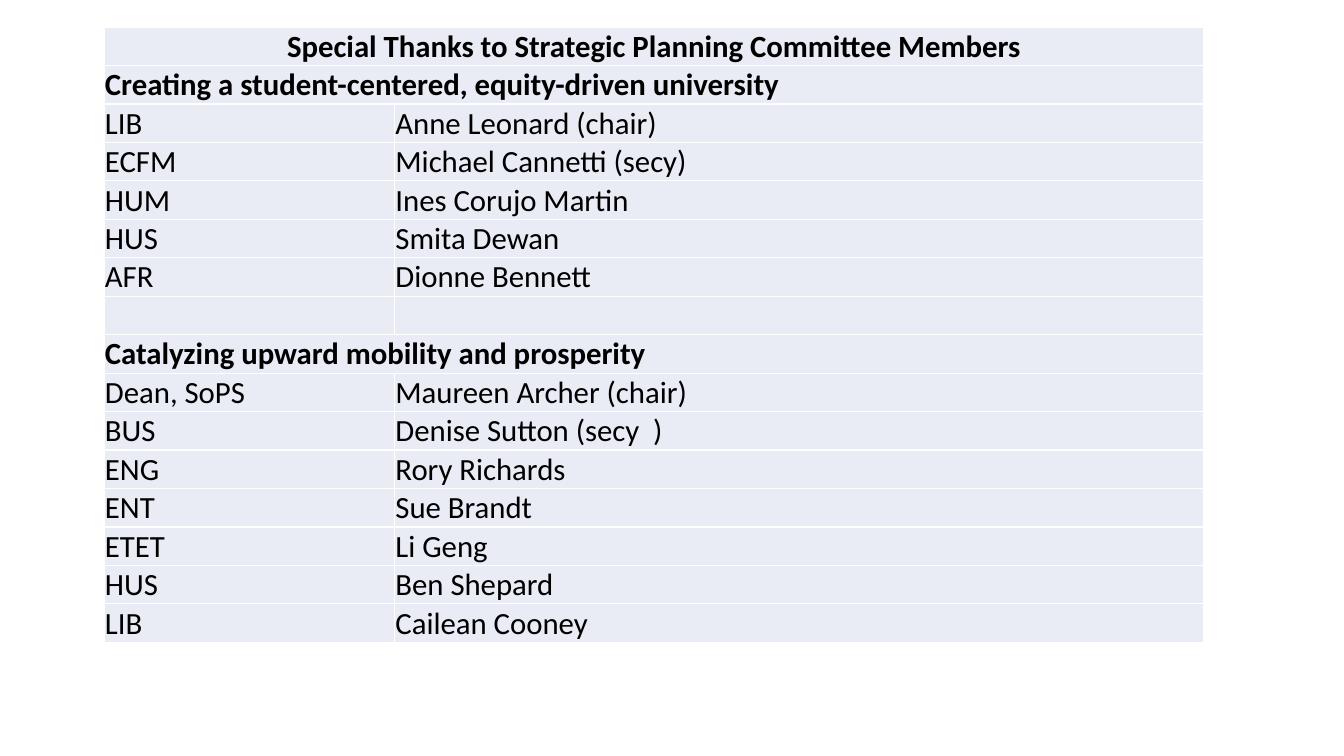
from dataclasses import dataclass

import pptx
import pptx.dml.color
import pptx.enum.text
import pptx.util

Pt = pptx.util.Pt


@dataclass(frozen=True)
class Theme:
    font: str = "Calibri"
    size: int = 22
    text: str = "000000"
    cell: str = "E9EBF5"


theme = Theme()
ANCHOR = pptx.enum.text.MSO_ANCHOR

# A row with one entry is a heading across both columns
rows = [
    ("Special Thanks to Strategic Planning Committee Members",),
    ("Creating a student-centered, equity-driven university",),
    ("LIB", "Anne Leonard (chair)"),
    ("ECFM", "Michael Cannetti (secy)"),
    ("HUM", "Ines Corujo Martin"),
    ("HUS", "Smita Dewan"),
    ("AFR", "Dionne Bennett"),
    ("", ""),
    ("Catalyzing upward mobility and prosperity",),
    ("Dean, SoPS", "Maureen Archer (chair)"),
    ("BUS", "Denise Sutton (secy  )"),
    ("ENG", "Rory Richards"),
    ("ENT", "Sue Brandt"),
    ("ETET", "Li Geng"),
    ("HUS", "Ben Shepard"),
    ("LIB", "Cailean Cooney"),
]
column_widths = (207.5, 578)
row_height = 27.13

prs = pptx.Presentation()
prs.slide_width, prs.slide_height = Pt(960), Pt(540)
s = prs.slides.add_slide(prs.slide_layouts[6])

table = s.shapes.add_table(
    len(rows), len(column_widths), Pt(74.3), Pt(19.3),
    Pt(sum(column_widths)), Pt(row_height * len(rows)),
).table
table.first_row = False
table.horz_banding = False
for column, width in zip(table.columns, column_widths):
    column.width = Pt(width)

for i, entries in enumerate(rows):
    table.rows[i].height = Pt(row_height)
    heading = len(entries) == 1
    if heading:
        table.cell(i, 0).merge(table.cell(i, 1))
    for j, text in enumerate(entries):
        cell = table.cell(i, j)
        cell.fill.solid()
        cell.fill.fore_color.rgb = pptx.dml.color.RGBColor.from_string(theme.cell)
        cell.margin_left = cell.margin_right = cell.margin_top = Pt(0.7)
        cell.margin_bottom = 0
        cell.vertical_anchor = ANCHOR.BOTTOM if i == 1 else ANCHOR.MIDDLE
        cell.text = text
        p = cell.text_frame.paragraphs[0]
        p.font.name = theme.font
        p.font.size = Pt(theme.size)
        p.font.bold = heading
        p.font.color.rgb = pptx.dml.color.RGBColor.from_string(theme.text)

table.cell(0, 0).text_frame.paragraphs[0].alignment = pptx.enum.text.PP_ALIGN.CENTER

prs.save("out.pptx")
